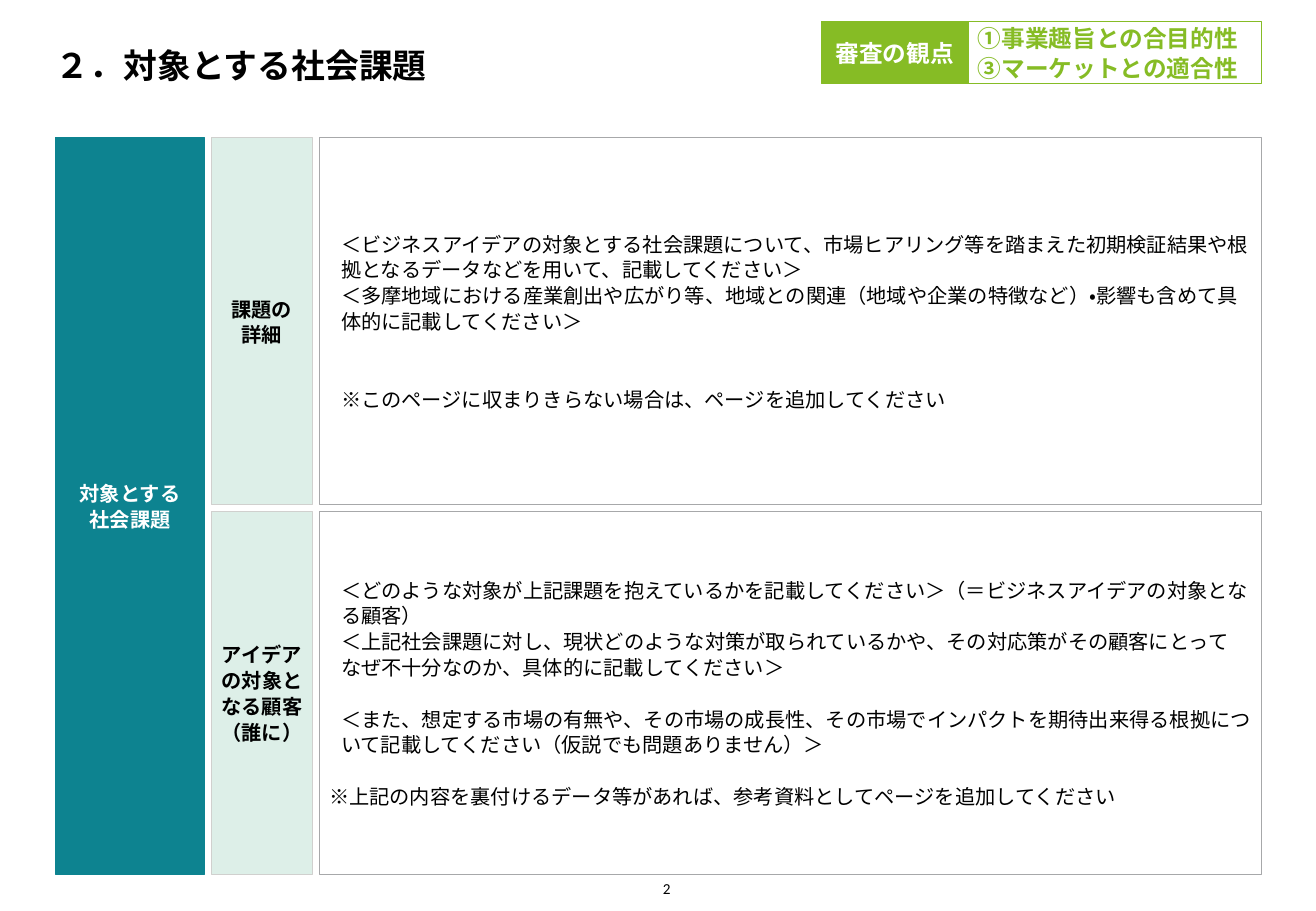
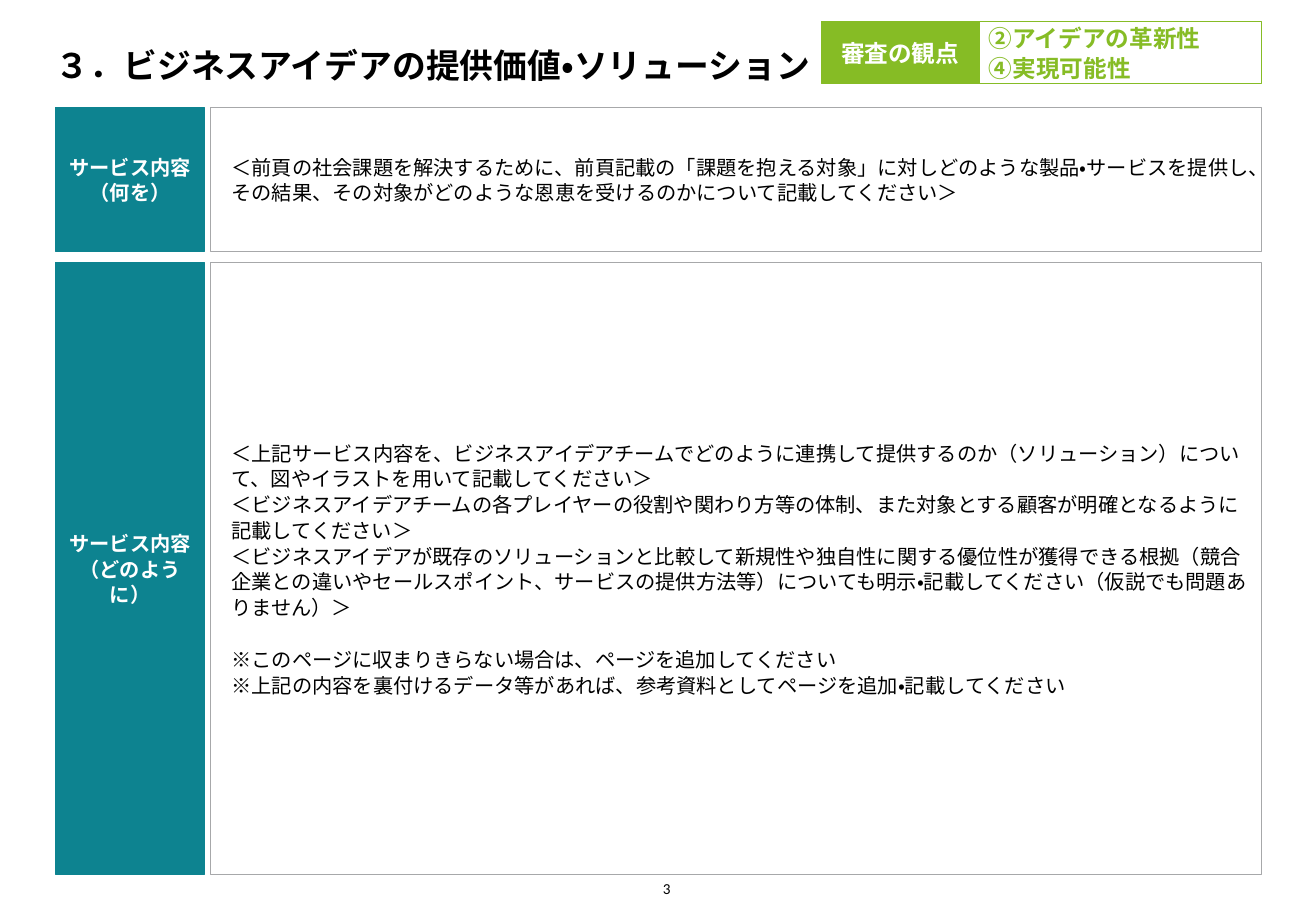
from copy import deepcopy
from dataclasses import dataclass

from pptx import Presentation
from pptx.dml.color import RGBColor
from pptx.enum.lang import MSO_LANGUAGE_ID
from pptx.enum.shapes import MSO_SHAPE
from pptx.enum.text import MSO_ANCHOR, PP_ALIGN
from pptx.oxml.ns import qn
from pptx.util import Cm, Pt

# Shared colours
TEAL, MINT, GREEN = "0D8390", "DDEFE8", "86BC25"
WHITE, BLACK, GREY, PALE = "FFFFFF", "000000", "A7A8AA", "D0D0CE"

# Shared grid, in cm
LEFT, RIGHT, BASE = 1.17, 26.38, 18.28
HEAD_W = 3.1
TAG_X, TAG_Y, TAG_H = 17.17, 0.45, 1.3
PAD, DENT = 0.2, 0.25
GAP = 15.5  # height of one skipped line, in points


@dataclass
class Para:
    text: str
    skip: int = 0
    dent: float = DENT


@dataclass
class Style:
    fill: str
    line: str
    color: str
    size: int = 12
    bold: bool = True
    align: PP_ALIGN = PP_ALIGN.CENTER


@dataclass
class Row:
    top: float
    end: float
    label: str
    body: list[Para]


@dataclass
class Page:
    num: int
    title: str
    cut: float
    tags: str
    rows: list[Row]
    gap: float
    group: str = ""


HEAD = Style(TEAL, TEAL, WHITE)
SIDE = Style(MINT, PALE, BLACK)
BODY = Style(WHITE, GREY, BLACK, bold=False, align=PP_ALIGN.LEFT)
TAG = Style(GREEN, GREEN, WHITE, size=14)
LIST = Style(WHITE, GREEN, GREEN, size=14, align=PP_ALIGN.LEFT)

PAGES = [
    Page(2, "２．対象とする社会課題", 3.07,
         "①事業趣旨との合目的性|③マーケットとの適合性", [
             Row(2.87, 10.56, "課題の\n詳細", [
                 Para("＜ビジネスアイデアの対象とする社会課題について、市場ヒアリング等を踏まえた初期検証結果や根拠となるデータなどを用いて、記載してください＞"),
                 Para("＜多摩地域における産業創出や広がり等、地域との関連（地域や企業の特徴など）・影響も含めて具体的に記載してください＞"),
                 Para("※このページに収まりきらない場合は、ページを追加してください", skip=2),
             ]),
             Row(10.69, BASE, "アイデアの対象となる顧客\n（誰に）", [
                 Para("＜どのような対象が上記課題を抱えているかを記載してください＞（＝ビジネスアイデアの対象となる顧客）"),
                 Para("＜上記社会課題に対し、現状どのような対策が取られているかや、その対応策がその顧客にとって\nなぜ不十分なのか、具体的に記載してください＞"),
                 Para("＜また、想定する市場の有無や、その市場の成長性、その市場でインパクトを期待出来得る根拠について記載してください（仮説でも問題ありません）＞", skip=1),
                 Para("※上記の内容を裏付けるデータ等があれば、参考資料としてページを追加してください", skip=1, dent=0),
             ]),
         ], 0.15, "対象とする\n社会課題"),
    Page(3, "３．ビジネスアイデアの提供価値・ソリューション", 3.3,
         "②アイデアの革新性|④実現可能性", [
             Row(2.24, 5.26, "サービス内容\n（何を）", [
                 Para("＜前頁の社会課題を解決するために、前頁記載の「課題を抱える対象」に対しどのような製品・サービスを提供し、その結果、その対象がどのような恩恵を受けるのかについて記載してください＞"),
             ]),
             Row(5.49, BASE, "サービス内容\n（どのように）", [
                 Para("＜上記サービス内容を、ビジネスアイデアチームでどのように連携して提供するのか（ソリューション）について、図やイラストを用いて記載してください＞"),
                 Para("＜ビジネスアイデアチームの各プレイヤーの役割や関わり方等の体制、また対象とする顧客が明確となるように記載してください＞"),
                 Para("＜ビジネスアイデアが既存のソリューションと比較して新規性や独自性に関する優位性が獲得できる根拠（競合企業との違いやセールスポイント、サービスの提供方法等）についても明示・記載してください（仮説でも問題ありません）＞"),
                 Para("※このページに収まりきらない場合は、ページを追加してください", skip=1),
                 Para("※上記の内容を裏付けるデータ等があれば、参考資料としてページを追加・記載してください"),
             ]),
         ], 0.12),
]


def rgb(code: str) -> RGBColor:
    return RGBColor.from_string(code)


def write(shape, paras: list[Para], *, size: int, color: str = BLACK,
          bold: bool = False, font: str = "Arial", align=PP_ALIGN.LEFT,
          anchor=MSO_ANCHOR.MIDDLE, pad: float = PAD,
          lead: float = 1.06) -> None:
    frame = shape.text_frame
    frame.word_wrap = True
    frame.vertical_anchor = anchor
    frame.margin_left = frame.margin_right = Cm(pad)
    frame.margin_top = frame.margin_bottom = Cm(pad)
    for i, para in enumerate(paras):
        line = frame.add_paragraph() if i else frame.paragraphs[0]
        line.text = para.text
        line.alignment = align
        line.line_spacing = lead
        if para.skip:
            line.space_before = Pt(GAP * para.skip)
        if para.dent:
            line._p.get_or_add_pPr().set("marL", str(Cm(para.dent)))
        for run in line.runs:
            face = run.font
            face.name, face.size, face.bold = font, Pt(size), bold
            face.color.rgb = rgb(color)
            face.language_id = MSO_LANGUAGE_ID.JAPANESE
        # Breaks keep the text size of their line
        for brk in line._p.findall(qn("a:br")):
            brk.append(deepcopy(line.runs[0]._r.rPr))


def plain(text: str) -> list[Para]:
    return [Para(part, dent=0) for part in text.split("|")]


def box(slide, x: float, y: float, end_x: float, end_y: float,
        paras: list[Para], style: Style) -> None:
    shape = slide.shapes.add_shape(MSO_SHAPE.RECTANGLE, Cm(x), Cm(y),
                                   Cm(end_x - x), Cm(end_y - y))
    shape.shadow.inherit = False
    shape.fill.solid()
    shape.fill.fore_color.rgb = rgb(style.fill)
    shape.line.color.rgb = rgb(style.line)
    shape.line.width = Pt(0.5)
    write(shape, paras, size=style.size, color=style.color,
          bold=style.bold, align=style.align)


def label(slide, x: float, y: float, w: float, h: float, text: str,
          **form) -> None:
    shape = slide.shapes.add_textbox(Cm(x), Cm(y), Cm(w), Cm(h))
    write(shape, plain(text), font="Calibri", pad=0, lead=1.0, **form)


def draw(slide, page: Page) -> None:
    # Title and page number
    label(slide, LEFT, 0.51, RIGHT - LEFT, 1.7, page.title, size=20, bold=True)
    label(slide, 13.51, 18.29, 0.51, 0.48, str(page.num), size=9,
          align=PP_ALIGN.RIGHT, anchor=MSO_ANCHOR.BOTTOM)

    # Review points
    mid, low = TAG_X + page.cut, TAG_Y + TAG_H
    box(slide, mid, TAG_Y, RIGHT, low, plain(page.tags), LIST)
    box(slide, TAG_X, TAG_Y, mid, low, plain("審査の観点"), TAG)

    # Heading that spans all rows
    x, width, style = LEFT, HEAD_W, HEAD
    if page.group:
        box(slide, x, page.rows[0].top, x + width, BASE,
            plain(page.group), HEAD)
        x, width, style = x + width + page.gap, 2.11, SIDE

    # Rows
    for row in page.rows:
        edge = x + width
        box(slide, x, row.top, edge, row.end, plain(row.label), style)
        box(slide, edge + page.gap, row.top, RIGHT, row.end, row.body, BODY)


def main() -> None:
    deck = Presentation()
    deck.slide_width, deck.slide_height = Cm(27.51), Cm(19.05)
    for page in PAGES:
        draw(deck.slides.add_slide(deck.slide_layouts[6]), page)
    deck.save("out.pptx")


if __name__ == "__main__":
    main()
